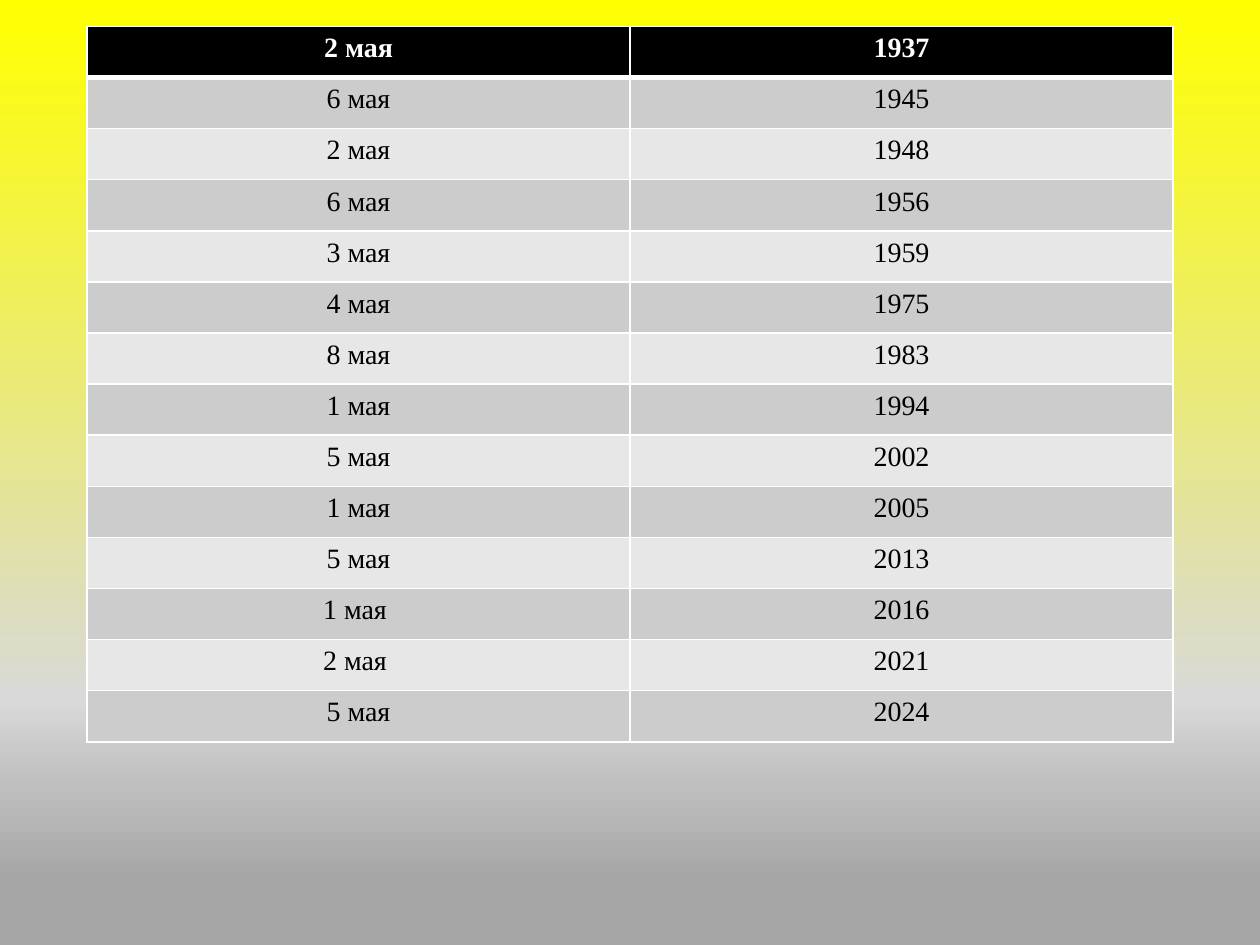
from typing import NamedTuple

from lxml import etree
from pptx import Presentation
from pptx.dml.color import RGBColor
from pptx.enum.text import PP_ALIGN
from pptx.oxml.ns import qn
from pptx.util import Inches, Pt

CENTER = PP_ALIGN.CENTER
FONT = "Times New Roman"
WHITE, BLACK = "FFFFFF", "000000"
BAND_COLORS = ("E7E7E7", "CCCCCC")
THIN, THICK = 1, 3  # border widths in points


class DayAndYear(NamedTuple):
    day: str
    year: str


class GradientStop(NamedTuple):
    percent: int
    color: str


DATES = [
    DayAndYear("2 мая", "1937"),
    DayAndYear("6 мая", "1945"),
    DayAndYear("2 мая", "1948"),
    DayAndYear("6 мая", "1956"),
    DayAndYear("3 мая", "1959"),
    DayAndYear("4 мая", "1975"),
    DayAndYear("8 мая", "1983"),
    DayAndYear("1 мая", "1994"),
    DayAndYear("5 мая", "2002"),
    DayAndYear("1 мая", "2005"),
    DayAndYear("5 мая", "2013"),
    DayAndYear("1 мая ", "2016"),
    DayAndYear("2 мая ", "2021"),
    DayAndYear("5 мая", "2024"),
]

BACKGROUND_STOPS = [
    GradientStop(0, "FFFF00"),
    GradientStop(68, "DCDCC7"),
    GradientStop(74, "D9D9D9"),
    GradientStop(83, "BFBFBF"),
    GradientStop(93, "A6A6A6"),
    GradientStop(100, "A6A6A6"),
]


def rgb(color: str) -> RGBColor:
    return RGBColor.from_string(color)


def paint_background(slide, stops: list[GradientStop]) -> None:
    fill = slide.background.fill
    fill.gradient()
    fill.gradient_angle = 270  # counter-clockwise, so top to bottom
    stop_list = next(slide.element.iter(qn("a:gsLst")))
    for default_stop in list(stop_list):
        stop_list.remove(default_stop)
    for stop in stops:
        node = etree.SubElement(stop_list, qn("a:gs"), pos=str(stop.percent * 1000))
        etree.SubElement(node, qn("a:srgbClr"), val=stop.color)


def draw_borders(cell, top: int, bottom: int) -> None:
    properties = cell._tc.get_or_add_tcPr()
    widths = {"a:lnL": THIN, "a:lnR": THIN, "a:lnT": top, "a:lnB": bottom}
    for position, (side, width) in enumerate(widths.items()):
        line = etree.Element(qn(side), w=str(Pt(width)))
        solid = etree.SubElement(line, qn("a:solidFill"))
        etree.SubElement(solid, qn("a:srgbClr"), val=WHITE)
        properties.insert(position, line)


def fill_cell(cell, text: str, row: int) -> None:
    is_header = row == 0
    cell.fill.solid()
    cell.fill.fore_color.rgb = rgb(BLACK if is_header else BAND_COLORS[row % 2])
    draw_borders(cell, THICK if row == 1 else THIN, THICK if is_header else THIN)

    cell.text_frame.text = text
    paragraph = cell.text_frame.paragraphs[0]
    paragraph.alignment = CENTER
    font = paragraph.runs[0].font
    font.name = FONT
    font.size = Pt(16)
    font.bold = is_header
    font.color.rgb = rgb(WHITE if is_header else BLACK)


def draw_dates(slide, dates: list[DayAndYear]) -> None:
    table = slide.shapes.add_table(
        len(dates), len(DayAndYear._fields),
        Inches(0.69), Inches(0.21), Inches(8.62), Inches(5.68),
    ).table
    for row, date in enumerate(dates):
        for column, text in enumerate(date):
            fill_cell(table.cell(row, column), text, row)


def main() -> None:
    presentation = Presentation()
    presentation.slide_width = Inches(10)
    presentation.slide_height = Inches(7.5)
    slide = presentation.slides.add_slide(presentation.slide_layouts[6])

    # Yellow to grey background
    paint_background(slide, BACKGROUND_STOPS)

    # Days and years
    draw_dates(slide, DATES)

    presentation.save("out.pptx")


if __name__ == "__main__":
    main()
